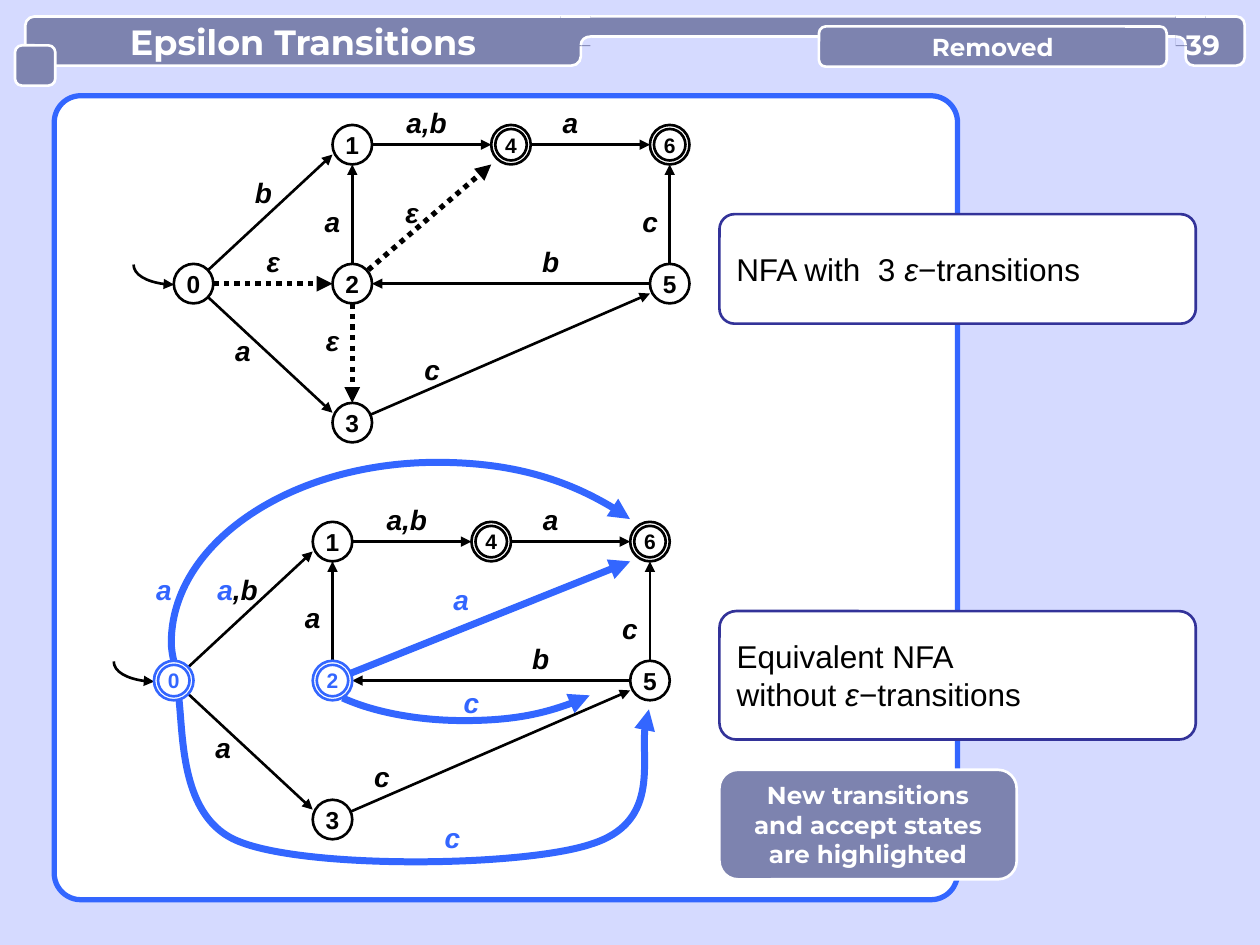
from lxml import etree
from pptx import Presentation
from pptx.dml.color import RGBColor
from pptx.enum.dml import MSO_LINE
from pptx.enum.shapes import MSO_CONNECTOR, MSO_SHAPE
from pptx.enum.text import MSO_ANCHOR, PP_ALIGN
from pptx.oxml.ns import qn
from pptx.util import Pt

RECT, ROUND, OVAL = MSO_SHAPE.RECTANGLE, MSO_SHAPE.ROUNDED_RECTANGLE, MSO_SHAPE.OVAL
STRAIGHT = MSO_CONNECTOR.STRAIGHT
DOTTED = MSO_LINE.ROUND_DOT
LEFT, CENTER = PP_ALIGN.LEFT, PP_ALIGN.CENTER
TOP, MIDDLE = MSO_ANCHOR.TOP, MSO_ANCHOR.MIDDLE

COLORS = {"sky": "D5DAFF", "slate": "7D83AF", "white": "FFFFFF",
          "black": "000000", "blue": "3366FF", "navy": "333399"}
FONTS = {
    "title": {"name": "Montserrat", "size": Pt(20), "bold": True},
    "number": {"name": "Montserrat", "size": Pt(16), "bold": True},
    "tag": {"name": "Montserrat", "size": Pt(14), "bold": True},
    "note": {"name": "Arial", "size": Pt(18)},
    "epsilon": {"name": "Arial", "size": Pt(18), "italic": True},
    "state": {"name": "Arial", "size": Pt(14), "bold": True},
    "accept": {"name": "Arial", "size": Pt(12), "bold": True},
    "label": {"name": "Arial", "size": Pt(16), "bold": True, "italic": True},
}


def paint(shape, fill=None, line=None, width=1.5, arrow=False, dash=None):
    """Set fill and outline, and take the theme shadow away."""
    if fill:
        shape.fill.solid()
        shape.fill.fore_color.rgb = RGBColor.from_string(COLORS[fill])
    elif hasattr(shape, "fill"):
        shape.fill.background()
    if line:
        shape.line.color.rgb = RGBColor.from_string(COLORS[line])
        shape.line.width = Pt(width)
    else:
        shape.line.fill.background()
    if dash:
        shape.line.dash_style = dash
    if arrow:
        etree.SubElement(shape.line._get_or_add_ln(), qn("a:tailEnd"), type="triangle")
    etree.SubElement(shape._element.spPr, qn("a:effectLst"))


def write(shape, paragraphs, align=CENTER, anchor=MIDDLE, margin=0):
    """Fill in paragraphs, each a list of (text, font, color) runs."""
    frame = shape.text_frame
    frame.word_wrap = True
    frame.vertical_anchor = anchor
    frame.margin_left = frame.margin_right = Pt(margin)
    frame.margin_top = frame.margin_bottom = 0
    for index, runs in enumerate(paragraphs):
        paragraph = frame.add_paragraph() if index else frame.paragraphs[0]
        paragraph.alignment = align
        for text, font, color in runs:
            run = paragraph.add_run()
            run.text = text
            for key, value in FONTS[font].items():
                setattr(run.font, key, value)
            run.font.color.rgb = RGBColor.from_string(COLORS[color])


presentation = Presentation()
presentation.slide_width, presentation.slide_height = Pt(720), Pt(540)
slide = presentation.slides.add_slide(presentation.slide_layouts[6])
slide.background.fill.solid()
slide.background.fill.fore_color.rgb = RGBColor.from_string(COLORS["sky"])
shapes = slide.shapes

# Panel, header and callouts: kind, box, corner, fill, line, width, paragraphs, alignment
transitions = [("ε", "epsilon", "black"), ("−transitions", "note", "black")]
highlight = ["New transitions", "and accept states", "are highlighted"]
boxes = [
    (ROUND, (31, 54.7, 516.2, 459.4), 0.033, "white", "blue", 3, [], CENTER),
    (ROUND, (14.4, 9.4, 317.5, 28.1), 0.188, "slate", "white", 1.5,
     [[("Epsilon Transitions", "title", "white")]], CENTER),
    (ROUND, (331.9, 9.4, 351.4, 11.5), 0.5, "slate", "white", 1.5, [], CENTER),
    (ROUND, (8.6, 25.9, 23, 23), 0.17, "slate", "white", 1.5, [], CENTER),
    (ROUND, (677.5, 9.4, 33.8, 28.1), 0.17, "slate", "white", 1.5, [], CENTER),
    (RECT, (320.4, 9.4, 17, 17), None, "slate", None, 0, [], CENTER),
    (RECT, (671.8, 9.4, 17, 17), None, "slate", None, 0, [], CENTER),
    (ROUND, (468, 15.1, 198.7, 23), 0.17, "slate", "white", 1.5,
     [[("Removed", "tag", "white")]], CENTER),
    (ROUND, (411.1, 122.4, 272.2, 62.6), 0.138, "white", "navy", 1.5,
     [[("NFA with  3 ", "note", "black")] + transitions], LEFT),
    (ROUND, (411.1, 349.2, 272.2, 73.4), 0.13, "white", "navy", 1.5,
     [[("Equivalent NFA", "note", "black")],
      [("without ", "note", "black")] + transitions], LEFT),
    (ROUND, (411.1, 439.9, 169.9, 62.6), 0.17, "slate", "white", 1.5,
     [[(line, "tag", "white")] for line in highlight], CENTER),
]
for kind, box, corner, fill, line, width, paragraphs, align in boxes:
    shape = shapes.add_shape(kind, *map(Pt, box))
    if corner:
        shape.adjustments[0] = corner
    paint(shape, fill, line, width)
    if paragraphs:
        write(shape, paragraphs, align, margin=7.2)

page_number = shapes.add_textbox(*map(Pt, (677.5, 15.8, 28.8, 19.4)))
write(page_number, [[("39", "number", "white")]], LEFT, margin=4)
page_number.text_frame.margin_left = 0
for left in (320.4, 671.8):
    paint(shapes.add_connector(STRAIGHT, *map(Pt, (left, 9.4, left + 17, 9.4))), line="white")

# States sit on a grid; the second automaton is the first one moved
RADIUS = 11.3
COLUMN, ROW = 90.7, 79.4
GRID = {"0": (0, 1), "1": (1, 0), "2": (1, 1), "3": (1, 2),
        "4": (2, 0), "5": (3, 1), "6": (3, 0)}
# from, to, start and end offsets in radii
shared_edges = [
    ("0", "1", (0, 0), (-1, 0.5)), ("0", "3", (0, 0), (-1, -0.5)),
    ("5", "6", (0, 0), (0, 1)), ("3", "5", (0, 0), (-1, 0.5)),
    ("2", "1", (0, -1), (0, 1)), ("5", "2", (-1, 0), (1, 0)),
    ("1", "4", (1, 0), (-1, 0)), ("4", "6", (1, 0), (-1, 0)),
]
epsilon_edges = [("2", "4", (0, 0), (-1, 1)), ("0", "2", (1, 0), (-1, 0)),
                 ("2", "3", (0, 1), (0, -1))]
shortcut_edges = [("2", "6", (0, 0), (-1, 1))]
shared_labels = [("a,b", 243.7, 60.5), ("a", 326, 60.5), ("a", 138.8, 190.8), ("a", 190, 116.6)]
automata = [
    {"shift": (0, 0), "accept": "46", "new": "",
     "edges": [(epsilon_edges, "black", 3, DOTTED)]},
    {"shift": (-11.3, 226.8), "accept": "0246", "new": "02",
     "edges": [(shortcut_edges, "blue", 4, None)]},
]

# Bézier chains: points, fill, line, width, arrow
notch_left = [(337.7, 20.9), (334.1, 20.9), (331.9, 23), (331.9, 25.9)]
notch_right = [(671.8, 20.9), (675.4, 20.9), (677.5, 23), (677.5, 25.9)]
curves = [
    (notch_left + [(337.7, 25.9)], "sky", None, 0, False),
    (notch_right + [(671.8, 25.9)], "sky", None, 0, False),
    (notch_left, None, "white", 1.5, False),
    (notch_right, None, "white", 1.5, False),
    ([(100.1, 388.8), (106.6, 404.6), (97.2, 465.8), (136.8, 481), (176.4, 496.8),
      (298.8, 495.4), (337.7, 482.4), (376.6, 470.2), (363.6, 421.2), (370.8, 405.4)],
     None, "blue", 4, True),
    ([(195.8, 398.9), (213.1, 406.8), (238.3, 411.8), (265, 411.8),
      (293, 411.8), (319.7, 406.1), (337, 397.4)], None, "blue", 4, True),
    ([(99.4, 378), (98.6, 374.4), (97.9, 370.8), (97.9, 367.2), (97.9, 310.3),
      (166.3, 264.2), (249.8, 264.2), (291.6, 264.2), (331.2, 275.8), (360, 296.6)],
     None, "blue", 4, True),
]
start_arrow = [(76.3, 151.2), (76.3, 157), (86.4, 162.7), (99.4, 162.7)]
for automaton in automata:
    dx, dy = automaton["shift"]
    curves.append(([(x + dx, y + dy) for x, y in start_arrow], None, "black", 1.5, True))

for points, fill, line, width, arrow in curves:
    start, *rest = [(Pt(x), Pt(y)) for x, y in points]
    builder = shapes.build_freeform(*start)
    builder.add_line_segments(rest, close=False)
    curve = builder.convert_to_shape()
    segments = curve._element.xpath(".//a:lnTo")
    for first in range(0, len(segments) // 3 * 3, 3):
        bezier = etree.Element(qn("a:cubicBezTo"))
        segments[first].addprevious(bezier)
        for segment in segments[first:first + 3]:
            bezier.append(segment[0])
            segment.getparent().remove(segment)
    paint(curve, fill, line, width, arrow)

# Transition labels: runs, centre, top
labels = [([(text, "black")], x, y) for text, x, y in [
    ("b", 150.5, 100.1), ("b", 314.6, 139.7), ("c", 371.5, 116.6), ("c", 247, 201.6),
    ("ε", 156.2, 139.7), ("ε", 190, 185), ("ε", 235.4, 111.6),
    ("b", 308.9, 366.5), ("c", 360, 349.2), ("c", 218.2, 434.2)]]
labels += [([(text, "blue")], x, y) for text, x, y in [
    ("a", 93.6, 326.9), ("a", 263.5, 332.6), ("c", 269.3, 391.7), ("c", 258.5, 468.7)]]
labels.append(([("a", "blue"), (",b", "black")], 135.7, 326.9))

for automaton in automata:
    dx, dy = automaton["shift"]
    centers = {state: (110.6 + COLUMN * column + dx, 82.7 + ROW * row + dy)
               for state, (column, row) in GRID.items()}
    for edges, color, width, dash in [(shared_edges, "black", 1.5, None)] + automaton["edges"]:
        for source, target, *offsets in edges:
            ends = [Pt(center + RADIUS * offset)
                    for state, pair in zip((source, target), offsets)
                    for center, offset in zip(centers[state], pair)]
            edge = shapes.add_connector(STRAIGHT, *ends)
            paint(edge, line=color, width=width, arrow=True, dash=dash)
    for state, (x, y) in centers.items():
        accepting = state in automaton["accept"]
        color = "blue" if state in automaton["new"] else "black"
        for radius in (RADIUS, 9) if accepting else (RADIUS,):
            circle = shapes.add_shape(
                OVAL, Pt(x - radius), Pt(y - radius), Pt(2 * radius), Pt(2 * radius))
            paint(circle, "white", color)
        write(circle, [[(state, "accept" if accepting else "state", color)]])
    labels += [([(text, "black")], x + dx, y + dy) for text, x, y in shared_labels]

for runs, x, y in labels:
    width = 39.6 if "b" in runs[-1][0] and "," in runs[-1][0] else 23
    label = shapes.add_textbox(Pt(x - width / 2), Pt(y), Pt(width), Pt(23))
    write(label, [[(text, "label", color) for text, color in runs]], anchor=TOP)

presentation.save("out.pptx")
